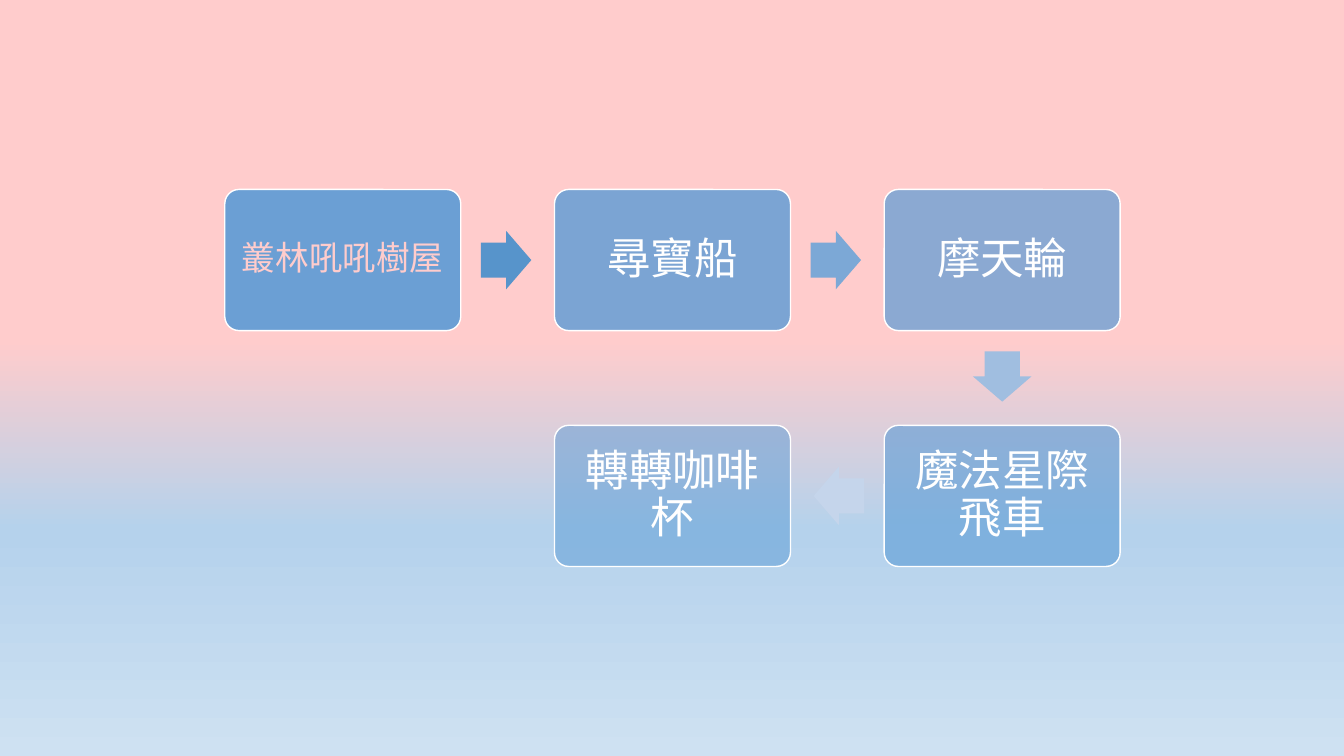
from copy import deepcopy

from lxml.etree import SubElement
from pptx import Presentation
from pptx.dml.color import RGBColor
from pptx.enum.shapes import MSO_SHAPE
from pptx.enum.text import MSO_ANCHOR, PP_ALIGN
from pptx.oxml.ns import qn
from pptx.util import Inches, Pt

PINK = RGBColor(0xFF, 0xCC, 0xCC)
SKY = RGBColor(0xB5, 0xD2, 0xEC)
PALE_SKY = RGBColor(0xCE, 0xE1, 0xF2)
BLUE = RGBColor(0x5B, 0x9B, 0xD5)
WHITE = RGBColor(0xFF, 0xFF, 0xFF)
ARROW_COLORS = [RGBColor(0x57, 0x94, 0xCB), RGBColor(0x7C, 0xA8, 0xD6),
                RGBColor(0xA0, 0xBE, 0xE0), RGBColor(0xC5, 0xD5, 0xEB)]

# Grid of the route, in inches
LEFT, TOP = 2.23, 1.88
COL_STEP, ROW_STEP = 3.27, 2.34
BOX_W, BOX_H = 2.34, 1.4
ARROW_W, ARROW_H = 0.5, 0.58
ARROW_LAG = 0.015  # each arrow sits slightly nearer the box it leaves

# Name, column, row
RIDES = [("叢林吼吼樹屋", 0, 0), ("尋寶船", 1, 0), ("摩天輪", 2, 0),
         ("魔法星際飛車", 2, 1), ("轉轉咖啡杯", 1, 1)]


def set_background(s, stops):
    """Fill the slide with a top-to-bottom gradient of (share, colour) stops."""
    fill = s.background.fill
    fill.gradient()
    fill.gradient_angle = 270
    gs_lst = s.element.find(".//" + qn("a:gsLst"))
    while len(gs_lst) < len(stops):
        gs_lst.append(deepcopy(gs_lst[-1]))
    for stop, (share, color) in zip(fill.gradient_stops, stops):
        stop.position = share
        stop.color.rgb = color


def add_text(sp, text, size=31, color=WHITE, margin=0.13, font="Calibri"):
    tf = sp.text_frame
    tf.word_wrap = True
    tf.vertical_anchor = MSO_ANCHOR.MIDDLE
    tf.margin_left = tf.margin_right = Inches(margin)
    tf.margin_top = tf.margin_bottom = Inches(margin)
    p = tf.paragraphs[0]
    p.alignment = PP_ALIGN.CENTER
    p.line_spacing = 0.9
    r = p.add_run()
    r.text = text
    r.font.size = Pt(size)
    r.font.name = font
    r.font.color.rgb = color


def add_filled(s, kind, center, size, color, adjustments):
    (x, y), (w, h) = center, size
    sp = s.shapes.add_shape(kind, Inches(x - w / 2), Inches(y - h / 2),
                            Inches(w), Inches(h))
    sp.shadow.inherit = False
    sp.fill.solid()
    sp.fill.fore_color.rgb = color
    for i, value in enumerate(adjustments):
        sp.adjustments[i] = value
    return sp


def cell_center(col, row):
    return (LEFT + col * COL_STEP + BOX_W / 2, TOP + row * ROW_STEP + BOX_H / 2)


def add_ride(s, col, row, opacity):
    sp = add_filled(s, MSO_SHAPE.ROUNDED_RECTANGLE, cell_center(col, row),
                    (BOX_W, BOX_H), BLUE, [0.1])
    color = sp.element.spPr.find(qn("a:solidFill"))[0]
    SubElement(color, qn("a:alpha")).set("val", str(opacity * 1000))
    sp.line.color.rgb = WHITE
    sp.line.width = Pt(1)
    return sp


def add_arrow(s, start, end, color):
    """Place an arrow midway between two grid cells, pointing at the second."""
    dx, dy = end[0] - start[0], end[1] - start[1]
    (x0, y0), (x1, y1) = cell_center(*start), cell_center(*end)
    center = ((x0 + x1) / 2 - dx * ARROW_LAG, (y0 + y1) / 2 - dy * ARROW_LAG)
    sp = add_filled(s, MSO_SHAPE.RIGHT_ARROW, center, (ARROW_W, ARROW_H),
                    color, [0.6, 0.5])
    sp.rotation = {(1, 0): 0, (0, 1): 90, (-1, 0): 180}[dx, dy]
    sp.line.fill.background()


def main():
    prs = Presentation()
    prs.slide_width, prs.slide_height = Inches(13.33), Inches(7.5)
    s = prs.slides.add_slide(prs.slide_layouts[6])
    set_background(s, [(0.45, PINK), (0.7, SKY), (1, PALE_SKY)])

    for i, (name, col, row) in enumerate(RIDES):
        if i:
            add_arrow(s, RIDES[i - 1][1:], (col, row), ARROW_COLORS[i - 1])
        sp = add_ride(s, col, row, opacity=90 - 10 * i)
        if i == 0:
            add_text(sp, name, size=24, color=PINK, margin=0.1)
        else:
            add_text(sp, name)

    prs.save("out.pptx")


if __name__ == "__main__":
    main()
